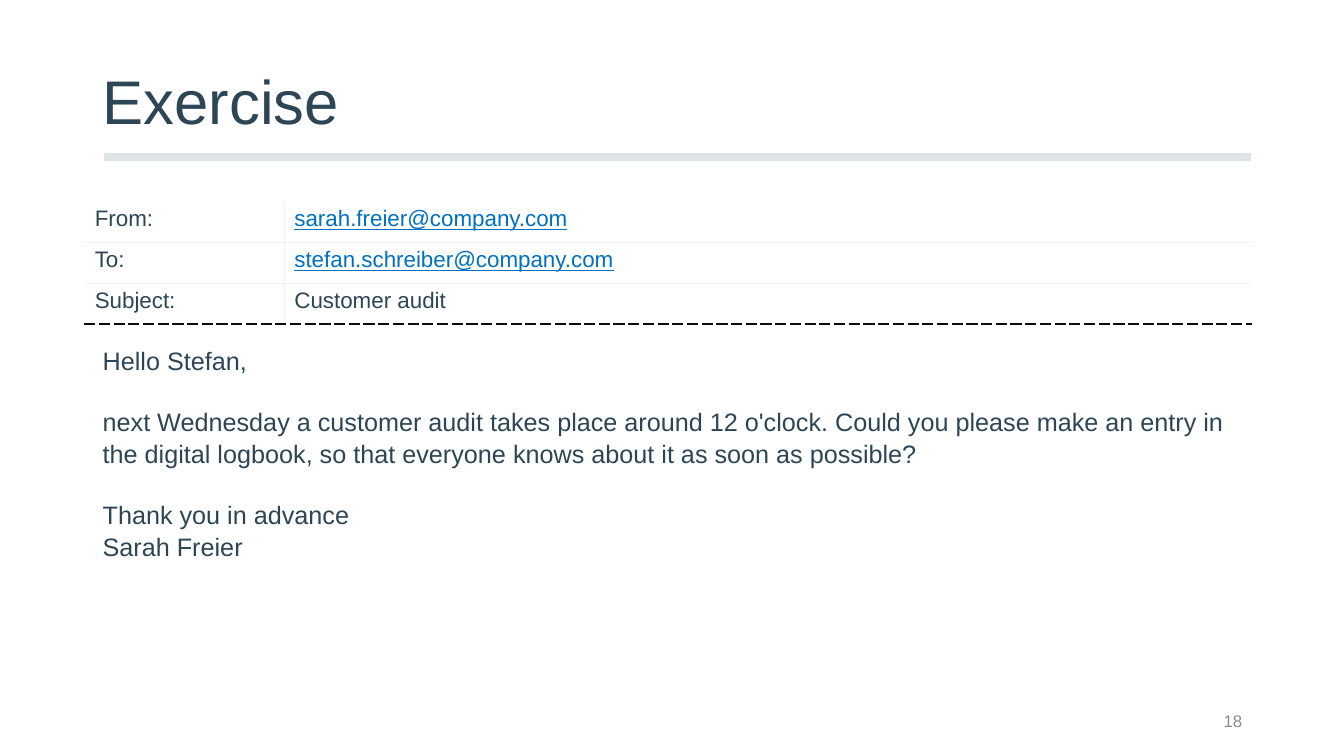
from pptx import Presentation
from pptx.dml.color import RGBColor
from pptx.enum.shapes import MSO_SHAPE
from pptx.enum.text import MSO_ANCHOR, PP_ALIGN
from pptx.oxml import parse_xml
from pptx.oxml.ns import nsdecls
from pptx.util import Inches, Pt

RECT = MSO_SHAPE.RECTANGLE
BOTTOM, MIDDLE, TOP = MSO_ANCHOR.BOTTOM, MSO_ANCHOR.MIDDLE, MSO_ANCHOR.TOP
LEFT, RIGHT = PP_ALIGN.LEFT, PP_ALIGN.RIGHT

COLORS = {"text": "2D4655", "link": "0070C0", "rule": "DFE4E7", "grid": "F2F2F2",
          "dash": "0D0D0D", "page": "8C8C8C", "white": "FFFFFF"}
FONT = "Arial"

MARGIN, CONTENT_W = 0.92, 11.5
LABEL_W, ROW_H = 1.98, 0.405

HEADER = [("From:", "sarah.freier@company.com"),
          ("To:", "stefan.schreiber@company.com"),
          ("Subject:", "Customer audit")]
# Each body paragraph with its space before, in points
BODY = [("Hello Stefan,", 0),
        ("next Wednesday a customer audit takes place around 12 o'clock. Could you "
         "please make an entry in the digital logbook, so that everyone knows about "
         "it as soon as possible?", 21.6),
        ("Thank you in advance", 21.6),
        ("Sarah Freier", 0)]


def rgb(name):
    return RGBColor.from_string(COLORS[name])


def style(p, size, color="text", align=LEFT, underline=None):
    p.alignment = align
    f = p.font
    f.name, f.size, f.underline = FONT, Pt(size), underline
    f.color.rgb = rgb(color)


def add_text(slide, box, anchor=TOP):
    tf = slide.shapes.add_textbox(*map(Inches, box)).text_frame
    tf.word_wrap = True
    tf.vertical_anchor = anchor
    return tf


def set_border(cell, side, color="grid", dash="solid"):
    ln = parse_xml(
        f'<a:{side} {nsdecls("a")} w="12700"><a:solidFill><a:srgbClr val="{COLORS[color]}"/>'
        f'</a:solidFill><a:prstDash val="{dash}"/></a:{side}>')
    tcPr = cell._tc.get_or_add_tcPr()
    borders = [e for e in tcPr if e.tag.rsplit("}", 1)[1].startswith("ln")]
    tcPr.insert(len(borders), ln)


def title_region(slide, x, y, w, h):
    title = slide.shapes.title
    title.left, title.top, title.width, title.height = map(Inches, (x, y, w, h))
    tf = title.text_frame
    tf.text = "Exercise"
    tf.word_wrap = True
    tf.vertical_anchor = BOTTOM
    p = tf.paragraphs[0]
    p.line_spacing = 0.9
    style(p, 44)

    # Rule under the title
    rule = slide.shapes.add_shape(RECT, *map(Inches, (x + 0.11, y + h + 0.1, w - 0.12, 0.08)))
    rule.shadow.inherit = False
    rule.fill.solid()
    rule.fill.fore_color.rgb = rgb("rule")
    rule.line.fill.background()


def header_table(slide, x, y, w):
    rows = len(HEADER)
    table = slide.shapes.add_table(rows, 2, *map(Inches, (x, y, w, rows * ROW_H))).table
    table.first_row = table.horz_banding = False
    for col, width in zip(table.columns, (LABEL_W, w - LABEL_W)):
        col.width = Inches(width)
    for r, texts in enumerate(HEADER):
        table.rows[r].height = Inches(ROW_H)
        for c, text in enumerate(texts):
            cell = table.cell(r, c)
            cell.text = text
            cell.fill.solid()
            cell.fill.fore_color.rgb = rgb("white")
            is_mail = "@" in text
            style(cell.text_frame.paragraphs[0], 16, "link" if is_mail else "text",
                  underline=is_mail)
            # Borders in schema order: left, right, top, bottom
            set_border(cell, "lnL" if c else "lnR")
            if r:
                set_border(cell, "lnT")
            if r == rows - 1:
                set_border(cell, "lnB", "dash", "sysDash")
            else:
                set_border(cell, "lnB")


def message_body(slide, *box):
    tf = add_text(slide, box)
    for i, (text, gap) in enumerate(BODY):
        p = tf.add_paragraph() if i else tf.paragraphs[0]
        p.text = text
        p.space_before = Pt(gap)
        p.line_spacing = 1.04
        style(p, 18)


def page_number(slide, *box):
    p = add_text(slide, box, MIDDLE).paragraphs[0]
    p.text = "18"
    style(p, 12, "page", RIGHT)


def main():
    prs = Presentation()
    prs.slide_width, prs.slide_height = Inches(13.33), Inches(7.5)
    slide = prs.slides.add_slide(prs.slide_layouts[5])
    title_region(slide, MARGIN, 0.4, CONTENT_W, 1.02)
    header_table(slide, MARGIN - 0.08, 2, CONTENT_W + 0.07)
    message_body(slide, MARGIN, 3.36, CONTENT_W, 2.52)
    page_number(slide, MARGIN + CONTENT_W - 3, 6.95, 3, 0.4)
    prs.save("out.pptx")


if __name__ == "__main__":
    main()
